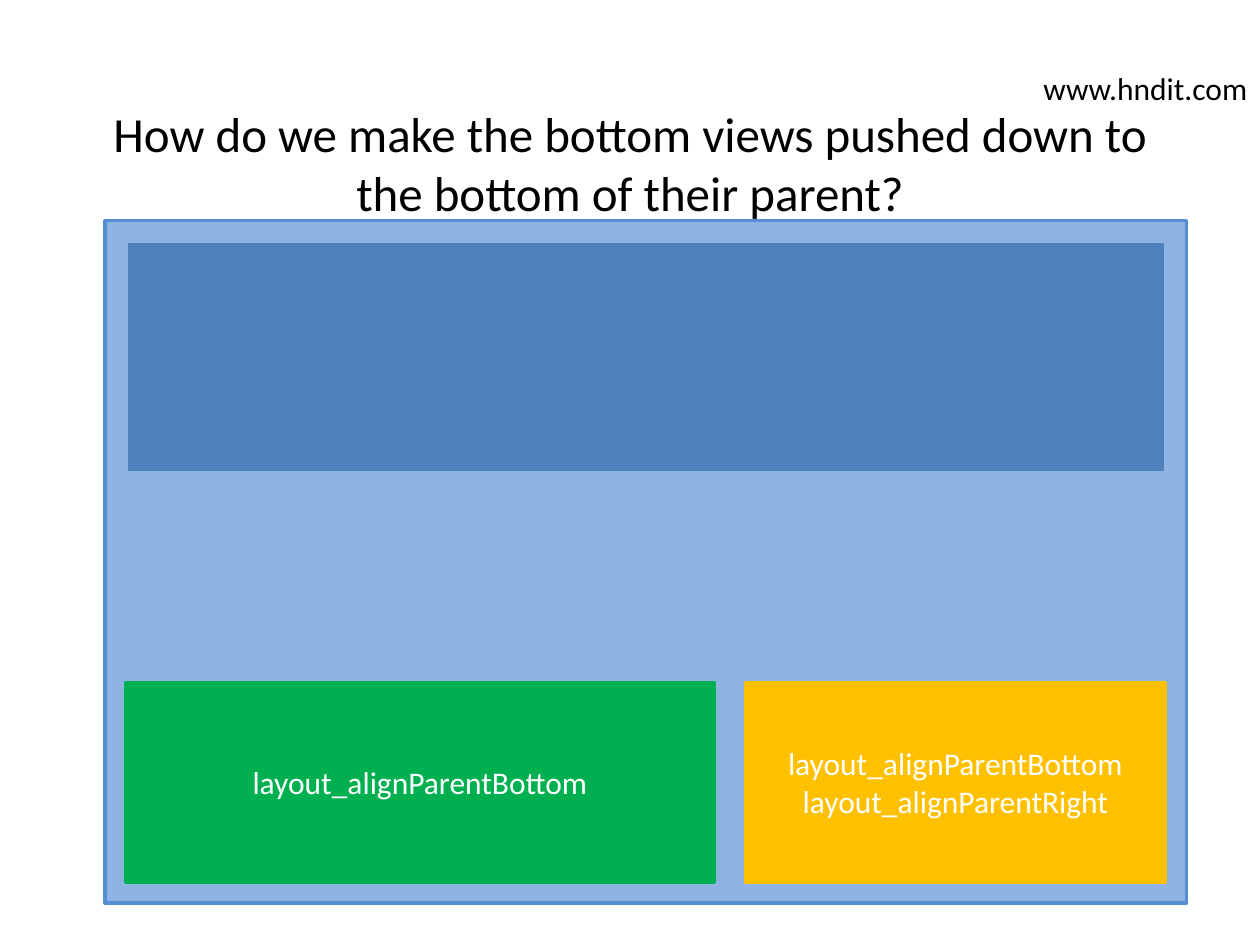
from dataclasses import dataclass

from pptx import Presentation
from pptx.dml.color import RGBColor
from pptx.enum.shapes import MSO_SHAPE
from pptx.enum.text import MSO_ANCHOR, MSO_AUTO_SIZE, PP_ALIGN
from pptx.shapes.autoshape import Shape
from pptx.slide import Slide
from pptx.text.text import TextFrame
from pptx.util import Inches, Pt

COLUMNS, ROWS = 120, 90
CELL = Inches(10) // COLUMNS


@dataclass(frozen=True)
class View:
    column: float
    row: float
    columns: float
    rows: float
    fill: str
    border: str
    attributes: tuple[str, ...] = ()


PARENT = View(10, 21, 103, 65, "8EB4E3", "558ED5")
CHILDREN = (
    View(12, 23, 99, 22, "4F81BD", PARENT.fill),
    View(12, 65, 56, 19, "00B050", "00B050", ("layout_alignParentBottom",)),
    View(71, 65, 40, 19, "FFC000", "FFC000",
         ("layout_alignParentBottom", "layout_alignParentRight")),
)


def color(value: str) -> RGBColor:
    return RGBColor.from_string(value)


def cells(*counts: float) -> list[int]:
    return [round(count * CELL) for count in counts]


def write(frame: TextFrame, *lines: str, size: int = 18, ink: str = "000000",
          align: PP_ALIGN = PP_ALIGN.CENTER,
          anchor: MSO_ANCHOR = MSO_ANCHOR.MIDDLE, wrap: bool = True) -> None:
    frame.word_wrap = wrap
    frame.vertical_anchor = anchor
    for index, line in enumerate(lines):
        paragraph = frame.add_paragraph() if index else frame.paragraphs[0]
        paragraph.alignment = align
        run = paragraph.add_run()
        run.text = line
        run.font.name = "Calibri"
        run.font.size = Pt(size)
        run.font.color.rgb = color(ink)


def draw_view(slide: Slide, view: View) -> Shape:
    box = slide.shapes.add_shape(
        MSO_SHAPE.RECTANGLE,
        *cells(view.column, view.row, view.columns, view.rows))
    box.shadow.inherit = False
    box.fill.solid()
    box.fill.fore_color.rgb = color(view.fill)
    box.line.color.rgb = color(view.border)
    box.line.width = Pt(2)
    write(box.text_frame, *view.attributes, ink="FFFFFF")
    return box


def main() -> None:
    deck = Presentation()
    deck.slide_width, deck.slide_height = cells(COLUMNS, ROWS)
    slide = deck.slides.add_slide(deck.slide_layouts[5])

    question = slide.shapes.title
    question.left, question.top, question.width, question.height = cells(
        6, 8, 108, 15)
    write(question.text_frame,
          "How do we make the bottom views pushed down to the bottom of their parent?",
          size=28)

    for view in (PARENT, *CHILDREN):
        draw_view(slide, view)

    address_width = 21.8
    address = slide.shapes.add_textbox(
        *cells(COLUMNS - address_width, 6, address_width, 4.8))
    write(address.text_frame, "www.hndit.com", align=PP_ALIGN.LEFT,
          anchor=MSO_ANCHOR.TOP, wrap=False)
    address.text_frame.auto_size = MSO_AUTO_SIZE.SHAPE_TO_FIT_TEXT

    deck.save("out.pptx")


if __name__ == "__main__":
    main()
